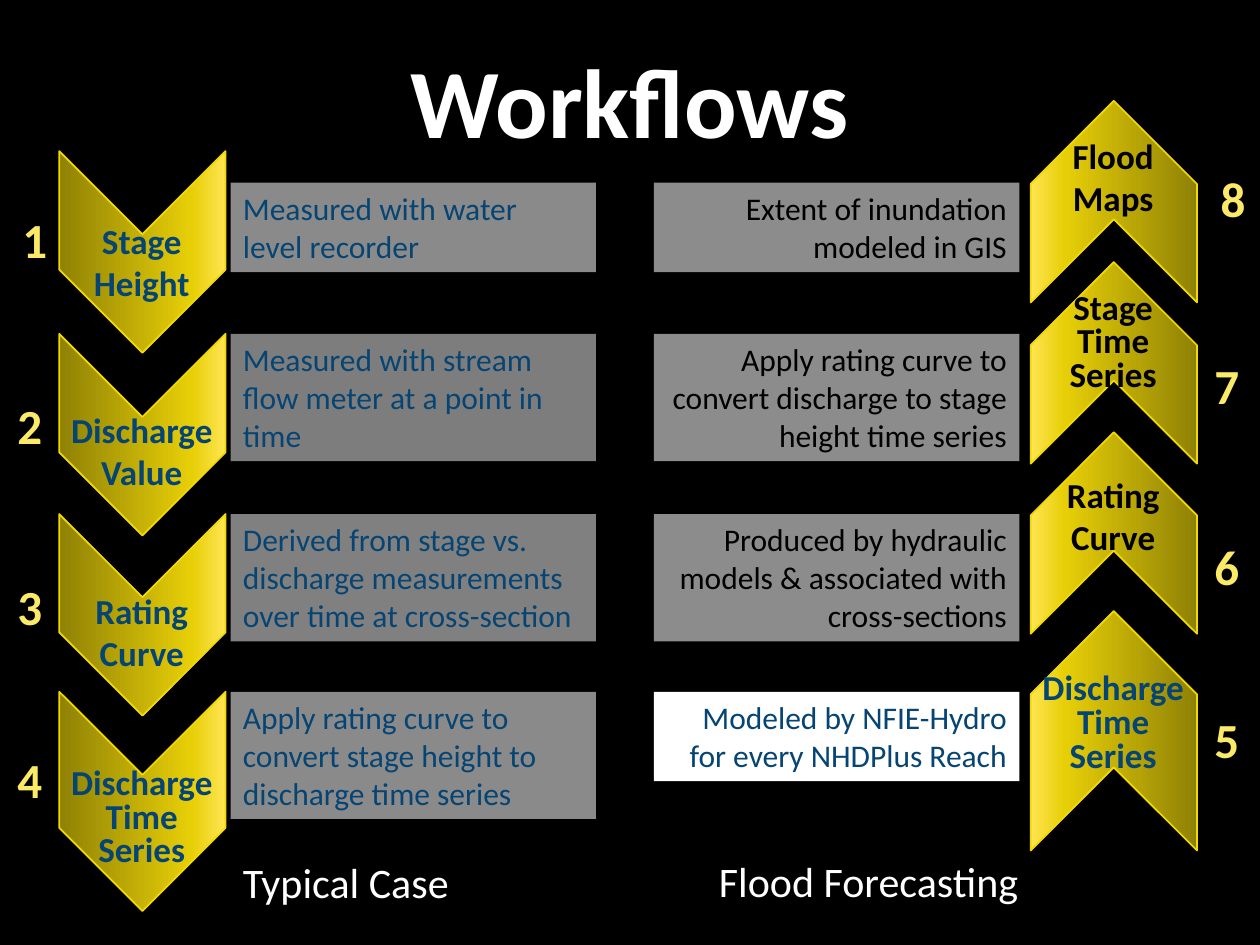
from collections import namedtuple
from copy import deepcopy

from lxml import etree
from pptx import Presentation
from pptx.dml.color import RGBColor
from pptx.enum.shapes import MSO_SHAPE
from pptx.enum.text import MSO_ANCHOR, MSO_AUTO_SIZE, PP_ALIGN
from pptx.oxml.ns import qn
from pptx.util import Inches, Pt

LEFT, CENTER, RIGHT = PP_ALIGN.LEFT, PP_ALIGN.CENTER, PP_ALIGN.RIGHT
TOP, MIDDLE = MSO_ANCHOR.TOP, MSO_ANCHOR.MIDDLE
FIT_SHAPE, NO_FIT = MSO_AUTO_SIZE.SHAPE_TO_FIT_TEXT, MSO_AUTO_SIZE.NONE
CHEVRON, RECTANGLE = MSO_SHAPE.CHEVRON, MSO_SHAPE.RECTANGLE

COLUMNS, ROWS = 100, 75
WIDTH, HEIGHT = Inches(10), Inches(7.5)
BLACK, WHITE, NAVY = "000000", "FFFFFF", "064573"
NUMBER_YELLOW, EDGE_YELLOW = "FAEA68", "F2D902"
GOLD_STOPS = [(0, "8F8105"), (0.8, "E7CF08"), (1, "FFE552")]

TITLE = {"size": Pt(56), "bold": True}
LABEL = {"size": Pt(20), "bold": True}
NUMBER = {"size": Pt(28), "bold": True}
PANEL = {"size": Pt(18), "bold": False}
CAPTION = {"size": Pt(24), "bold": False}

CHEVRON_WIDTH, LABEL_WIDTH, PANEL_WIDTH, NUMBER_WIDTH = 13.2, 14.1, 29, 3.4
PANEL_TOPS = [0, 12, 26.3, 40.4]
LINE_ROWS, PANEL_PADDING = 3, 1.1

Step = namedtuple("Step", "number number_at label label_top label_color "
                          "middle length panel panel_lines panel_color opacity")
Lane = namedtuple("Lane", "rotation chevron_center label_left panel_left "
                          "align caption caption_at steps")

TYPICAL = Lane(90, 11.3, 4.2, 18.3, LEFT, "Typical Case", (18.3, 53), [
    Step("1", (0.8, 1.6), "Stage Height", 2.4, NAVY, 5.5, 16,
         "Measured with water level recorder", 2, NAVY, 54),
    Step("2", (0.4, 16.4), "Discharge Value", 17.4, NAVY, 20, 16,
         "Measured with stream flow meter at a point in time", 3, NAVY, 49),
    Step("3", (0.4, 30.8), "Rating Curve", 31.8, NAVY, 34.3, 16,
         "Derived from stage vs. discharge measurements over time at cross-section",
         3, NAVY, 50),
    Step("4", (0.4, 44.5), "Discharge Time Series", 46, NAVY, 49.1, 17.4,
         "Apply rating curve to convert stage height to discharge time series",
         3, NAVY, 54),
])
FORECASTING = Lane(270, 38.4, 31.3, 1.9, RIGHT, "Flood Forecasting", (2.8, 52.9), [
    Step("8", (45.9, -1.6), "Flood\nMaps", -4.3, BLACK, 1.5, 16,
         "Extent of inundation modeled in GIS", 2, BLACK, 55),
    Step("7", (45.4, 13.2), "Stage\nTime Series", 8.3, BLACK, 14.3, 16,
         "Apply rating curve to convert discharge to stage height time series",
         3, BLACK, 55),
    Step("6", (45.4, 27.6), "Rating Curve", 22.6, BLACK, 27.8, 16,
         "Produced by hydraulic models & associated with cross-sections",
         3, BLACK, 55),
    Step("5", (45.4, 41.3), "Discharge Time Series", 38.5, NAVY, 43.5, 19,
         "Modeled by NFIE-Hydro for every NHDPlus Reach", 2, NAVY, 100),
])


def rgb(value):
    return RGBColor.from_string(value)


def on_grid(left, top, width, height):
    column, row = WIDTH / COLUMNS, HEIGHT / ROWS
    return [round(left * column), round(top * row),
            round(width * column), round(height * row)]


def write(holder, text, style, color, align, anchor=TOP, fit=FIT_SHAPE, spacing=None):
    frame = holder.text_frame
    frame_format = {"word_wrap": True, "auto_size": fit, "vertical_anchor": anchor}
    for name, value in frame_format.items():
        setattr(frame, name, value)
    paragraph = frame.paragraphs[0]
    paragraph.text = text
    paragraph.alignment = align
    if spacing:
        paragraph.line_spacing = spacing
    for run in paragraph.runs:
        for name, value in {"name": "Calibri", **style}.items():
            setattr(run.font, name, value)
        run.font.color.rgb = rgb(color)


def add_text(slide, box, *content, **options):
    write(slide.shapes.add_textbox(*on_grid(*box)), *content, **options)


def add_title(slide, box, text):
    title = slide.shapes.title
    for name, value in zip(("left", "top", "width", "height"), on_grid(*box)):
        setattr(title, name, value)
    write(title, text, TITLE, WHITE, CENTER, anchor=MIDDLE, fit=NO_FIT)


def add_chevron(slide, box, rotation):
    chevron = slide.shapes.add_shape(CHEVRON, *on_grid(*box))
    chevron.rotation = rotation
    chevron.shadow.inherit = False
    chevron.line.color.rgb = rgb(EDGE_YELLOW)
    chevron.line.width = Pt(1)
    chevron.fill.gradient()
    chevron.fill.gradient_angle = 90
    stop_list = chevron.fill._xPr.find(".//" + qn("a:gsLst"))
    stop_list.append(deepcopy(stop_list[0]))
    for stop, (position, color) in zip(chevron.fill.gradient_stops, GOLD_STOPS):
        stop.position = position
        stop.color.rgb = rgb(color)


def add_panel(slide, box, step, align):
    panel = slide.shapes.add_shape(RECTANGLE, *on_grid(*box))
    panel.shadow.inherit = False
    panel.line.fill.background()
    panel.fill.solid()
    panel.fill.fore_color.rgb = rgb(WHITE)
    if step.opacity < 100:
        color = panel.fill._xPr.find(".//" + qn("a:srgbClr"))
        etree.SubElement(color, qn("a:alpha")).set("val", str(step.opacity * 1000))
    write(panel, step.panel, PANEL, step.panel_color, align)


def add_lane(slide, box, lane):
    left, top, _, _ = box
    for step, panel_top in zip(lane.steps, PANEL_TOPS):
        add_chevron(slide, (left + lane.chevron_center - step.length / 2,
                            top + step.middle - CHEVRON_WIDTH / 2,
                            step.length, CHEVRON_WIDTH), lane.rotation)
        three_lines = "Time" in step.label
        add_text(slide, (left + lane.label_left, top + step.label_top,
                         LABEL_WIDTH, 9.2 if three_lines else 7.7),
                 step.label, LABEL, step.label_color, CENTER,
                 spacing=0.8 if three_lines else None)
        add_panel(slide, (left + lane.panel_left, top + panel_top, PANEL_WIDTH,
                          step.panel_lines * LINE_ROWS + PANEL_PADDING),
                  step, lane.align)
        number_left, number_top = step.number_at
        add_text(slide, (left + number_left, top + number_top, NUMBER_WIDTH, 5.7),
                 step.number, NUMBER, NUMBER_YELLOW, CENTER)
    caption_left, caption_top = lane.caption_at
    add_text(slide, (left + caption_left, top + caption_top, PANEL_WIDTH, 5),
             lane.caption, CAPTION, WHITE, lane.align)


def main():
    deck = Presentation()
    deck.slide_width, deck.slide_height = WIDTH, HEIGHT
    slide = deck.slides.add_slide(deck.slide_layouts[5])
    slide.background.fill.solid()
    slide.background.fill.fore_color.rgb = rgb(BLACK)
    add_title(slide, (8.5, 1.2, 82.9, 13.3), "Workflows")
    for index, lane in enumerate((TYPICAL, FORECASTING)):
        add_lane(slide, (index * COLUMNS / 2, 14.5, COLUMNS / 2, 58), lane)
    deck.save("out.pptx")


if __name__ == "__main__":
    main()
